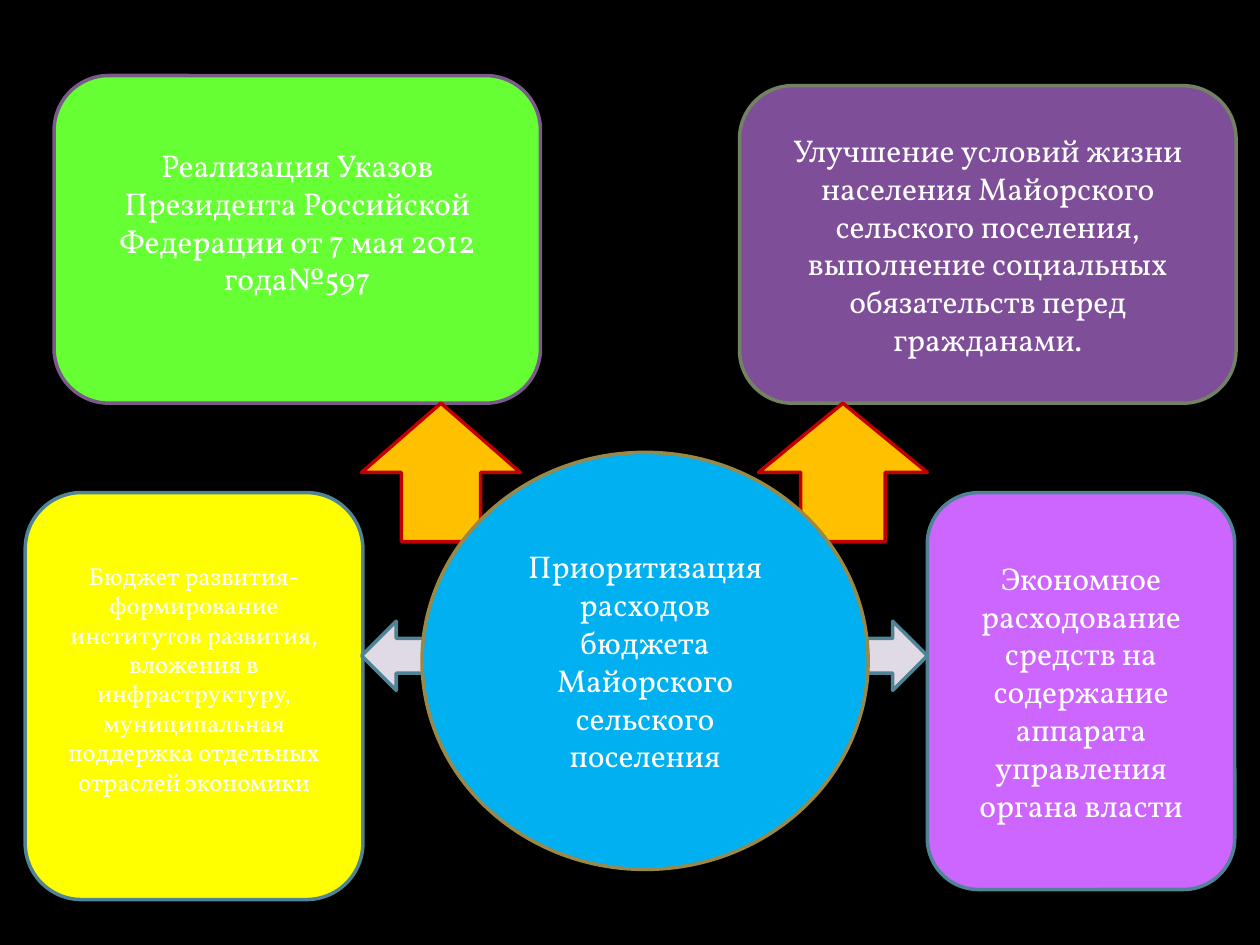
from dataclasses import dataclass

from pptx import Presentation
from pptx.dml.color import RGBColor as RGB
from pptx.enum.shapes import MSO_SHAPE as SHAPE
from pptx.enum.text import MSO_ANCHOR as ANCHOR, PP_ALIGN as ALIGN
from pptx.util import Inches, Pt


@dataclass(frozen=True)
class Theme:
    font: str = "Vollkorn"
    body: int = 18
    small: int = 14
    outline: int = 2
    background: str = "000000"
    text: str = "FFFFFF"
    green: str = "66FF33"
    yellow: str = "FFFF00"
    pink: str = "CC66FF"
    purple: str = "7E4E99"
    blue: str = "00B0F0"
    orange: str = "FFC000"
    pale: str = "DFDAE3"
    plum: str = "795A8A"
    teal: str = "4F8395"
    olive: str = "738262"
    sand: str = "98894B"
    red: str = "C00000"


class SlideBuilder:
    def __init__(self, prs, theme):
        self.theme = theme
        self.slide = prs.slides.add_slide(prs.slide_layouts[6])
        fill = self.slide.background.fill
        fill.solid()
        fill.fore_color.rgb = RGB.from_string(theme.background)

    def shape(self, kind, box, fill, line):
        sp = self.slide.shapes.add_shape(kind, *map(Inches, box))
        sp.shadow.inherit = False
        sp.fill.solid()
        sp.fill.fore_color.rgb = RGB.from_string(fill)
        sp.line.color.rgb = RGB.from_string(line)
        sp.line.width = Pt(self.theme.outline)
        return sp

    def text(self, sp, lines, size, bottom):
        tf = sp.text_frame
        frame_format = {
            "word_wrap": True,
            "vertical_anchor": ANCHOR.MIDDLE,
            "margin_bottom": Inches(bottom),
        }
        for name, value in frame_format.items():
            setattr(tf, name, value)
        tf.text = "\n".join(lines)
        run_format = {"name": self.theme.font, "size": Pt(size)}
        for p in tf.paragraphs:
            p.alignment = ALIGN.CENTER
            for r in p.runs:
                for name, value in run_format.items():
                    setattr(r.font, name, value)
                r.font.color.rgb = RGB.from_string(self.theme.text)

    def card(self, box, fill, line, text, size=None, bottom=0.05):
        sp = self.shape(SHAPE.ROUNDED_RECTANGLE, box, fill, line)
        self.text(sp, [text], size or self.theme.body, bottom)

    def hub(self, box, fill, line, lines):
        sp = self.shape(SHAPE.OVAL, box, fill, line)
        self.text(sp, lines, self.theme.body, 0.05)


def main():
    prs = Presentation()
    prs.slide_width, prs.slide_height = Inches(10), Inches(7.5)
    theme = Theme()
    s = SlideBuilder(prs, theme)
    raised = 0.33  # bottom inset that lifts the text above the middle

    # Priority cards
    s.card((0.43, 0.6, 3.86, 2.6), theme.green, theme.plum,
           "Реализация Указов Президента Российской Федерации "
           "от 7 мая 2012 года№597", bottom=raised)
    s.card((0.2, 3.91, 2.68, 3.23), theme.yellow, theme.teal,
           "Бюджет развития-формирование институтов развития, вложения в "
           "инфраструктуру, муниципальная поддержка отдельных отраслей "
           "экономики", size=theme.small, bottom=raised)
    s.card((7.36, 3.91, 2.44, 3.15), theme.pink, theme.teal,
           "Экономное расходование средств на содержание аппарата "
           "управления органа власти")
    s.card((5.87, 0.68, 3.94, 2.52), theme.purple, theme.olive,
           "Улучшение условий жизни населения Майорского сельского "
           "поселения, выполнение социальных обязательств перед гражданами.")

    # Arrows to the side cards
    for kind, left in ((SHAPE.LEFT_ARROW, 2.87), (SHAPE.RIGHT_ARROW, 6.81)):
        s.shape(kind, (left, 4.93, 0.55, 0.55), theme.pale, theme.teal)

    # Arrows to the upper cards
    for left, width in ((2.87, 1.26), (6.02, 1.34)):
        s.shape(SHAPE.UP_ARROW, (left, 3.2, width, 1.1),
                theme.orange, theme.red)

    # Central topic, in front of the arrows
    s.hub((3.35, 3.59, 3.54, 3.31), theme.blue, theme.sand,
          ["Приоритизация", "расходов", "бюджета",
           "Майорского сельского поселения"])

    prs.save("out.pptx")


if __name__ == "__main__":
    main()
